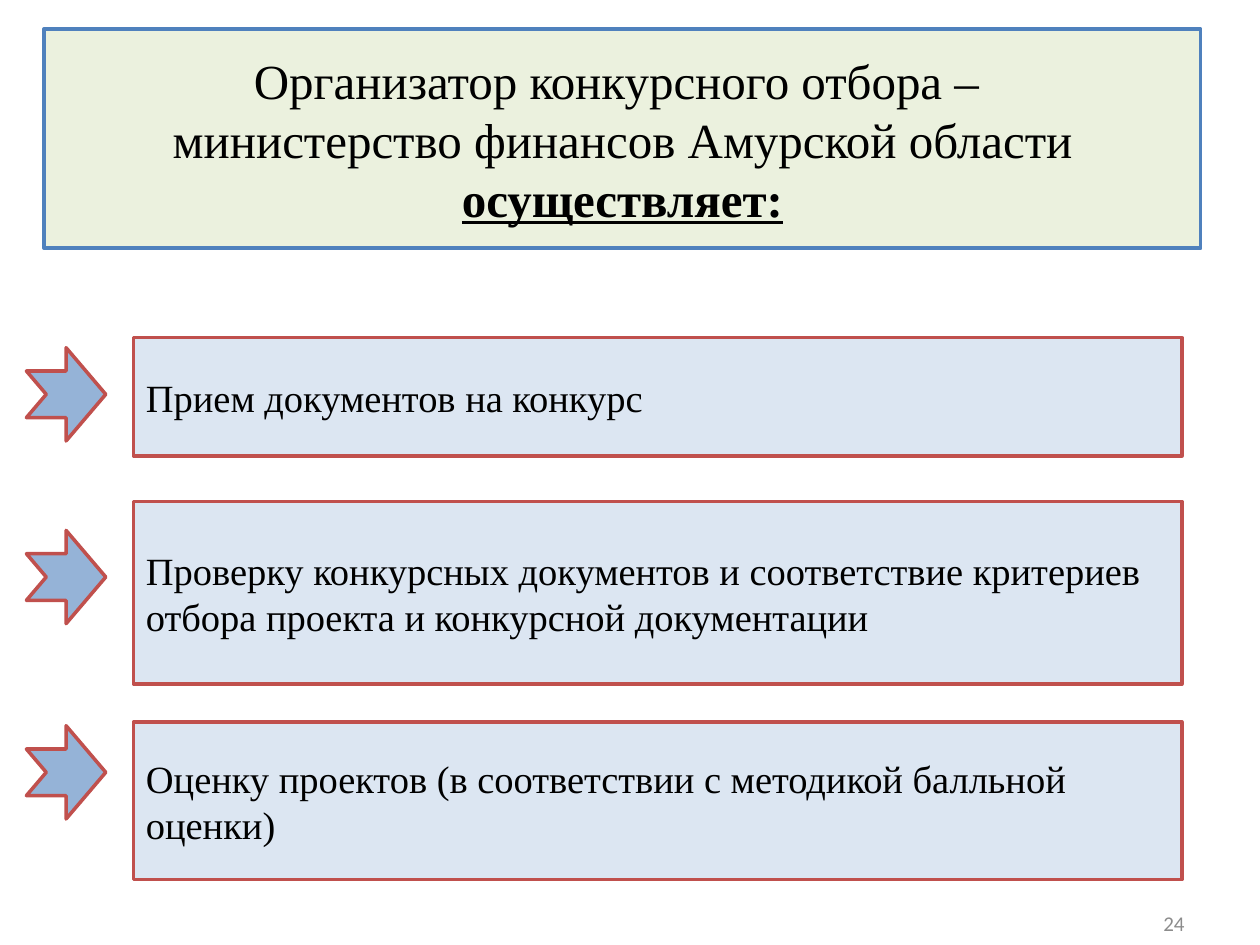
from dataclasses import dataclass

from pptx import Presentation
from pptx import util as u
from pptx.dml.color import RGBColor
from pptx.enum import shapes, text


@dataclass(frozen=True)
class Theme:
    serif: str = "Times New Roman"
    sans: str = "Calibri"
    ink: str = "000000"
    muted: str = "8C8C8C"
    title_fill: str = "EBF1DE"
    title_line: str = "4F81BD"
    step_fill: str = "DCE6F2"
    arrow_fill: str = "95B3D7"
    step_line: str = "C0504D"
    title_size: int = 28
    step_size: int = 22
    number_size: int = 12
    line_width: int = 2


class SlideBuilder:
    """Places styled elements on a grid of 100 columns by 75 rows."""

    COLS, ROWS = 100, 75

    def __init__(self, prs, theme):
        self.theme = theme
        self.col = prs.slide_width / self.COLS
        self.row = prs.slide_height / self.ROWS
        self.slide = prs.slides.add_slide(prs.slide_layouts[5])

    def box(self, left, top, width, height):
        return (u.Emu(round(left * self.col)), u.Emu(round(top * self.row)),
                u.Emu(round(width * self.col)), u.Emu(round(height * self.row)))

    def paint(self, sp, fill, line):
        sp.fill.solid()
        sp.fill.fore_color.rgb = RGBColor.from_string(fill)
        sp.line.color.rgb = RGBColor.from_string(line)
        sp.line.width = u.Pt(self.theme.line_width)

    def format_text(self, sp, align, font, size, color):
        tf = sp.text_frame
        tf.word_wrap = True
        tf.auto_size = text.MSO_AUTO_SIZE.NONE
        tf.vertical_anchor = text.MSO_ANCHOR.MIDDLE
        for p in tf.paragraphs:
            p.alignment = align
            for r in p.runs:
                r.font.name = font
                r.font.size = u.Pt(size)
                r.font.color.rgb = RGBColor.from_string(color)

    def title(self, at, content, emphasis):
        t = self.theme
        sp = self.slide.shapes.title
        sp.left, sp.top, sp.width, sp.height = self.box(*at)
        self.paint(sp, t.title_fill, t.title_line)
        p = sp.text_frame.paragraphs[0]
        p.text = content
        r = p.add_run()
        r.text = emphasis
        r.font.bold = r.font.underline = True
        self.format_text(sp, text.PP_ALIGN.CENTER, t.serif, t.title_size, t.ink)

    def shape(self, kind, at, fill):
        sp = self.slide.shapes.add_shape(kind, *self.box(*at))
        sp.shadow.inherit = False
        self.paint(sp, fill, self.theme.step_line)
        return sp

    def step(self, at, content):
        t = self.theme
        sp = self.shape(shapes.MSO_SHAPE.RECTANGLE, at, t.step_fill)
        sp.text_frame.text = content
        self.format_text(sp, text.PP_ALIGN.LEFT, t.serif, t.step_size, t.ink)

    def arrow(self, at):
        self.shape(shapes.MSO_SHAPE.NOTCHED_RIGHT_ARROW, at, self.theme.arrow_fill)

    def page_number(self, at, content):
        t = self.theme
        sp = self.slide.shapes.add_textbox(*self.box(*at))
        sp.text_frame.text = content
        self.format_text(sp, text.PP_ALIGN.RIGHT, t.sans, t.number_size, t.muted)


# Box top, box height, arrow top (in rows) and wording of each step
STEPS = [
    (26.8, 9.4, 27.6, "Прием документов на конкурс"),
    (39.8, 14.5, 42.1, "Проверку конкурсных документов и соответствие критериев "
                       "отбора проекта и конкурсной документации"),
    (57.3, 12.5, 57.6, "Оценку проектов (в соответствии с методикой балльной оценки)"),
]


def main():
    prs = Presentation()
    prs.slide_width, prs.slide_height = u.Inches(10), u.Inches(7.5)
    s = SlideBuilder(prs, Theme())

    # Heading
    s.title((3.5, 2.3, 91.8, 17.4),
            "Организатор конкурсного отбора – \vминистерство финансов Амурской области ",
            "осуществляет:")

    # Steps with their arrows
    for top, height, arrow_top, content in STEPS:
        s.step((10.6, top, 83.2, height), content)
        s.arrow((2.1, arrow_top, 6.3, 7.4))

    # Page number
    s.page_number((71.7, 71.3, 23.3, 4), "24")

    prs.save("out.pptx")


if __name__ == "__main__":
    main()
